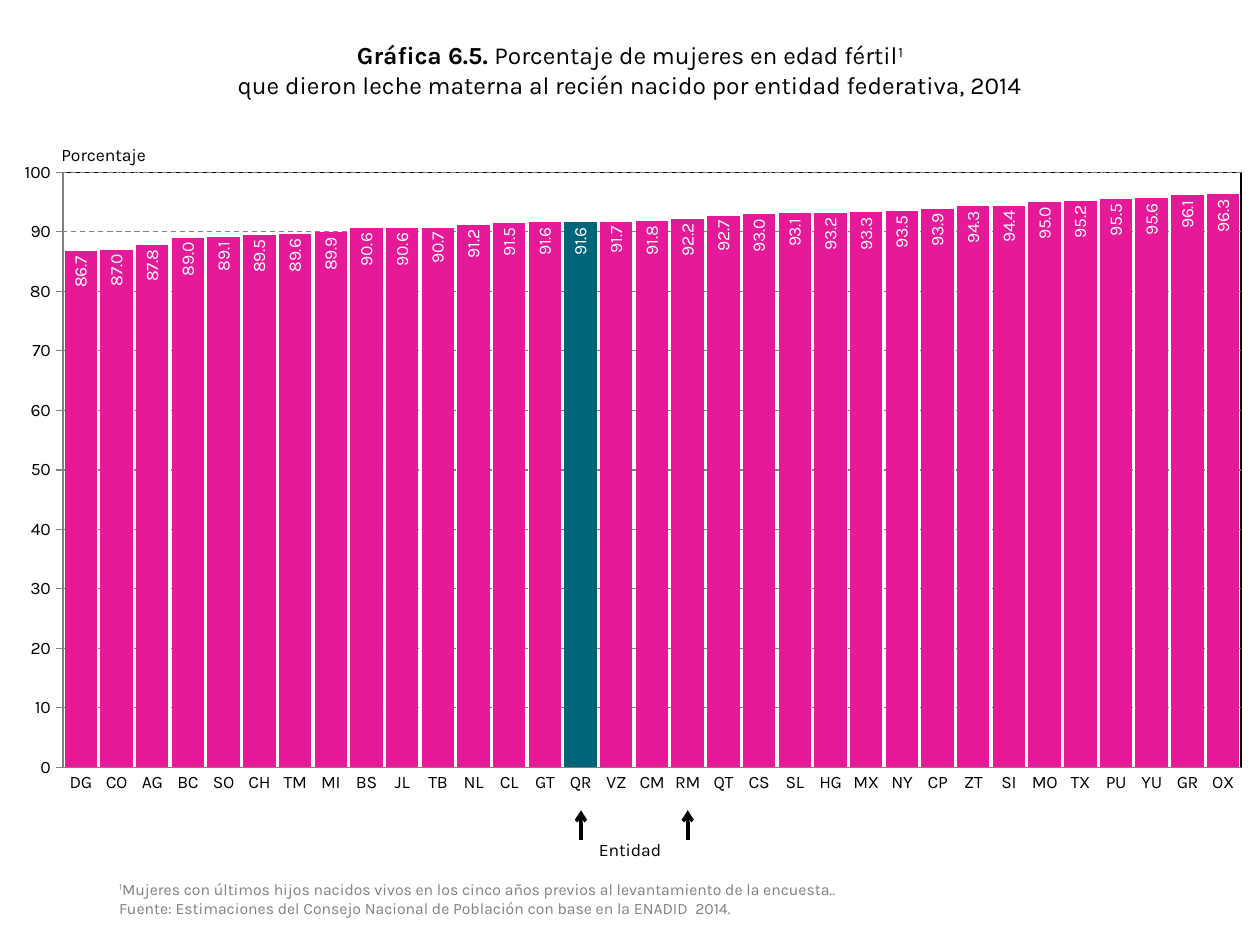
from pptx import Presentation, util as u
from pptx.chart import data as cd
from pptx.dml import color
from pptx.enum import chart as ch, dml, shapes, text
from pptx.oxml import parse_xml, ns

Pt, RGB = u.Pt, color.RGBColor
BLACK, WHITE = RGB(0, 0, 0), RGB(255, 255, 255)
GRAY, PINK, TEAL = RGB(0x80, 0x80, 0x80), RGB(0xE6, 0x19, 0x98), RGB(0x00, 0x65, 0x78)
FONT = "Karla"
MARK = "QR"
STATES = ("DG CO AG BC SO CH TM MI BS JL TB NL CL GT QR VZ CM RM QT CS SL HG "
          "MX NY CP ZT SI MO TX PU YU GR OX").split()
RATES = [86.7, 87, 87.8, 89, 89.1, 89.5, 89.6, 89.9, 90.6, 90.6, 90.7,
         91.2, 91.5, 91.6, 91.6, 91.7, 91.8, 92.2, 92.7, 93, 93.1, 93.2,
         93.3, 93.5, 93.9, 94.3, 94.4, 95, 95.2, 95.5, 95.6, 96.1, 96.3]
PLOT = {"x": 0.05, "y": 0.038, "w": 0.935, "h": 0.903}
TITLE = [[("Gráfica 6.5. ", "b"), ("Porcentaje de mujeres en edad fértil", ""), ("1", "sup")],
         [("que dieron leche materna al recién nacido por entidad federativa, 2014", "")]]
NOTES = [[("1", "sup"), ("Mujeres con últimos hijos nacidos vivos en los cinco años "
                         "previos al levantamiento de la encuesta..", "")],
         [("Fuente: Estimaciones del Consejo Nacional de Población con base en la ENADID  2014.", "")]]
MID, LEFT = text.PP_ALIGN.CENTER, text.PP_ALIGN.LEFT
BOXES = [
    ((20, 19.4, 680, 41), TITLE, 14, BLACK, MID),
    ((28, 78.5, 136, 19.4), [[("Porcentaje", "")]], 10, BLACK, LEFT),
    ((61, 499, 629, 29), NOTES, 9, GRAY, LEFT),
    ((318, 476, 84, 19.4), [[("Entidad", "")]], 10, BLACK, MID),
]
ARROWS = [332, 393]


def style(font, size, shade):
    font.name, font.size, font.color.rgb = FONT, Pt(size), shade


def stroke(line, shade, width=0.75):
    line.color.rgb, line.width = shade, Pt(width)


def add_text(slide, place, lines, size, shade, align):
    frame = slide.shapes.add_textbox(*map(Pt, place)).text_frame
    frame.word_wrap = True
    frame.vertical_anchor = text.MSO_ANCHOR.MIDDLE
    for i, line in enumerate(lines):
        para = frame.add_paragraph() if i else frame.paragraphs[0]
        para.alignment = align
        for words, kind in line:
            run = para.add_run()
            run.text = words
            style(run.font, size, shade)
            run.font.bold = kind == "b"
            if kind == "sup":
                run.font._element.set("baseline", "30000")


def set_plot(chart):
    area = chart._chartSpace.chart.plotArea
    for old in area.findall(ns.qn("c:layout")):
        area.remove(old)
    sizes = "".join(f'<c:{k} val="{v}"/>' for k, v in PLOT.items())
    area.insert(0, parse_xml(
        f'<c:layout {ns.nsdecls("c")}><c:manualLayout><c:layoutTarget val="inner"/>'
        f'<c:xMode val="edge"/><c:yMode val="edge"/>{sizes}</c:manualLayout></c:layout>'))
    area.append(parse_xml(
        f'<c:spPr {ns.nsdecls("c", "a")}><a:noFill/><a:ln w="9525"><a:solidFill>'
        f'<a:srgbClr val="{BLACK}"/></a:solidFill></a:ln></c:spPr>'))


def add_bars(slide):
    data = cd.CategoryChartData(number_format="0.0")
    data.categories = STATES
    data.add_series("Porcentaje", RATES)
    chart = slide.shapes.add_chart(ch.XL_CHART_TYPE.COLUMN_CLUSTERED, Pt(0), Pt(84.2),
                                   Pt(720), Pt(376.6), data).chart
    chart.has_legend = chart.has_title = False
    style(chart.font, 10, BLACK)
    set_plot(chart)

    cat, val = chart.category_axis, chart.value_axis
    cat.major_tick_mark = ch.XL_TICK_MARK.NONE
    val.major_tick_mark = ch.XL_TICK_MARK.OUTSIDE
    val.minimum_scale, val.maximum_scale, val.major_unit = 0, 100, 10
    val.tick_labels.number_format = "0"
    val.tick_labels.number_format_is_linked = False
    grid = val.major_gridlines.format.line
    for line in (cat.format.line, val.format.line, grid):
        stroke(line, GRAY)
    grid.dash_style = dml.MSO_LINE.DASH

    plot = chart.plots[0]
    plot.gap_width, plot.vary_by_categories = 10, False
    bars = plot.series[0]
    point = bars.points[STATES.index(MARK)]
    for part, shade in ((bars, PINK), (point, TEAL)):
        part.format.fill.solid()
        part.format.fill.fore_color.rgb = shade
    tags = bars.data_labels
    tags.show_value = True
    tags.position = ch.XL_LABEL_POSITION.INSIDE_END
    tags.number_format, tags.number_format_is_linked = "0.0", False
    style(tags.font, 10, WHITE)
    body = tags._element.find(".//" + ns.qn("a:bodyPr"))
    body.set("rot", "-5400000")
    body.set("vert", "horz")


def add_arrow(slide, x):
    line = slide.shapes.add_connector(shapes.MSO_CONNECTOR.STRAIGHT,
                                      Pt(x), Pt(480), Pt(x), Pt(463))
    stroke(line.line, BLACK, 2)
    line.line._get_or_add_ln().append(
        parse_xml(f'<a:tailEnd {ns.nsdecls("a")} type="arrow"/>'))
    line._element.spPr.append(parse_xml(f'<a:effectLst {ns.nsdecls("a")}/>'))


def main():
    deck = Presentation()
    deck.slide_width, deck.slide_height = Pt(720), Pt(540)
    slide = deck.slides.add_slide(deck.slide_layouts[6])
    add_bars(slide)
    for box in BOXES:
        add_text(slide, *box)
    for x in ARROWS:
        add_arrow(slide, x)
    deck.save("out.pptx")


if __name__ == "__main__":
    main()
